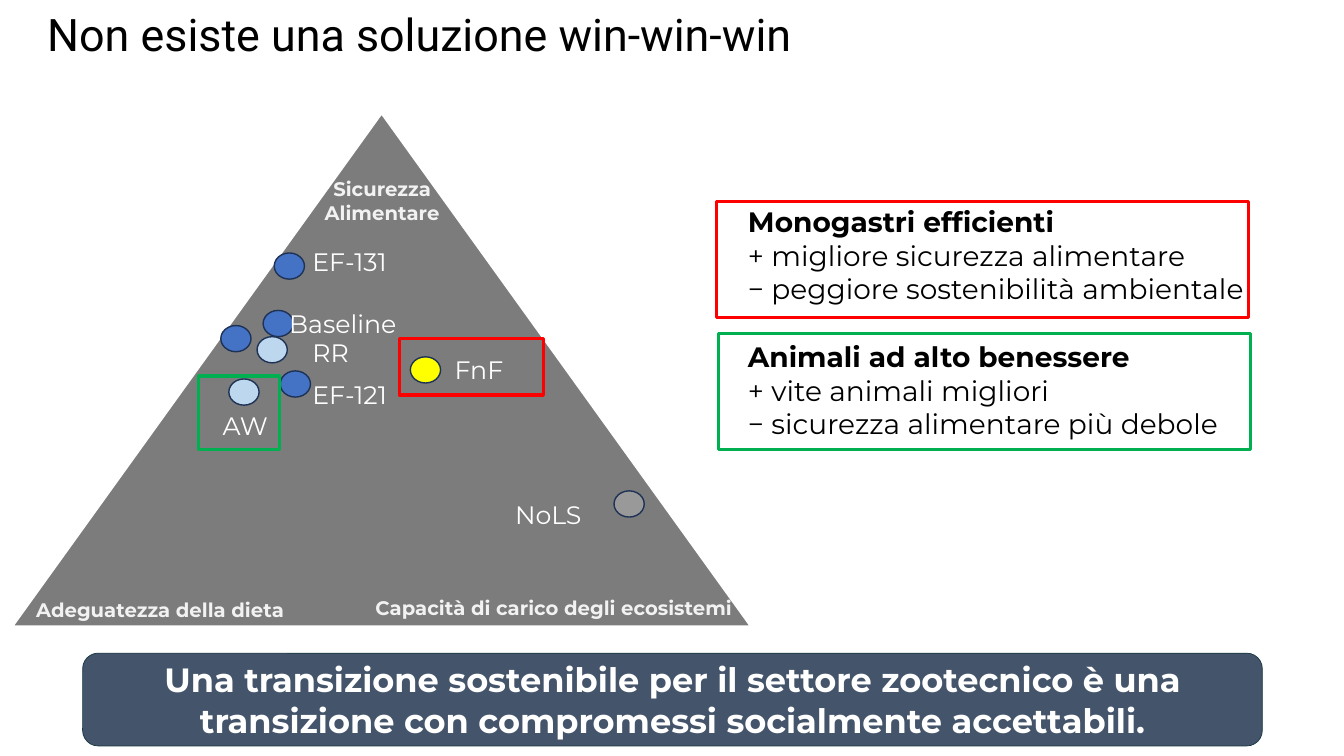
"""Build the slide on trade-offs between food security, diet and ecosystems."""
from pptx import Presentation
from pptx import util as u
from pptx.dml.color import RGBColor
from pptx.enum import shapes, text

PX = 9144
SLIDE = (1333, 750)
COLOURS = {
    "black": "000000", "white": "FFFFFF", "pale": "F2F2F2", "triangle": "7C7C7C",
    "blue": "4472C4", "light": "BDD7EE", "yellow": "FFFF00", "grey": "999999",
    "outline": "1E3256", "banner": "44546A", "banner_line": "16373D",
    "red": "FF0000", "green": "00B050",
}
FORMATS = {
    "title": ({"name": "Roboto", "size": u.Pt(32)}, "black"),
    "heading": ({"name": "Montserrat", "size": u.Pt(20), "bold": True}, "black"),
    "point": ({"name": "Montserrat", "size": u.Pt(20), "bold": False}, "black"),
    "corner": ({"name": "Montserrat", "size": u.Pt(14), "bold": True}, "pale"),
    "label": ({"name": "Montserrat", "size": u.Pt(18)}, "white"),
    "banner": ({"name": "Montserrat", "size": u.Pt(24), "bold": True}, "white"),
}
LEFT, CENTRE, RIGHT = text.PP_ALIGN.LEFT, text.PP_ALIGN.CENTER, text.PP_ALIGN.RIGHT

TITLE = ("Non esiste una soluzione win-win-win", (37, 8, 1079, 145))
OPTIONS_BOX = (732, 130, 601, 313)
OPTIONS_TOP = 73
OPTIONS_GAP = u.Pt(24.4)
OPTIONS = [
    ("Monogastri efficienti",
     ["+ migliore sicurezza alimentare", "− peggiore sostenibilità ambientale"]),
    ("Animali ad alto benessere",
     ["+ vite animali migliori", "− sicurezza alimentare più debole"]),
]
TRIANGLE = (13, 113, 731, 508)
CORNERS = [
    (["Sicurezza", "Alimentare"], (272, 171, 214, 57), CENTRE),
    (["Adeguatezza della dieta"], (26, 588, 386, 34), LEFT),
    (["Capacità di carico degli ecosistemi"], (350, 586, 386, 34), RIGHT),
]
DOT = (30, 26)
DOTS = [
    (407, 354, "yellow"), (261, 308, "blue"), (278, 368, "blue"), (227, 376, "light"),
    (609, 487, "grey"), (219, 323, "blue"), (255, 334, "light"), (272, 251, "blue"),
]
LABEL_HEIGHT = 37
LABELS = [
    ("FnF", 441, 347, 201), ("RR", 300, 330, 65), ("NoLS", 501, 490, 101),
    ("AW", 211, 402, 201), ("Baseline", 277, 301, 201),
    ("EF-121", 300, 371, 201), ("EF-131", 300, 239, 201),
]
BANNER = ("Una transizione sostenibile per il settore zootecnico è una "
          "transizione con compromessi socialmente accettabili.", (82, 648, 1170, 92))
BANNER_INSET = 12
FRAMES = [
    ((396, 336, 143, 56), "red"), ((711, 200, 527, 115), "red"),
    ((197, 373, 80, 73), "green"), ((713, 331, 527, 115), "green"),
]


def px(*lengths):
    return [u.Emu(length * PX) for length in lengths]


def colour(name):
    return RGBColor.from_string(COLOURS[name])


def write(frame, lines, align=LEFT):
    """Fill a text frame with (words, format name) lines."""
    frame.word_wrap = True
    for index, (words, style) in enumerate(lines):
        paragraph = frame.add_paragraph() if index else frame.paragraphs[0]
        paragraph.alignment = align
        run = paragraph.add_run()
        run.text = words
        values, font_colour = FORMATS[style]
        for name, value in values.items():
            setattr(run.font, name, value)
        run.font.color.rgb = colour(font_colour)


def add_text(slide, box, lines, align=LEFT):
    frame = slide.shapes.add_textbox(*px(*box)).text_frame
    write(frame, lines, align)
    return frame


def add_shape(slide, kind, box, fill, line, width):
    shape = slide.shapes.add_shape(kind, *px(*box))
    shape.shadow.inherit = False
    if fill:
        shape.fill.solid()
        shape.fill.fore_color.rgb = colour(fill)
    else:
        shape.fill.background()
    shape.line.color.rgb = colour(line)
    shape.line.width = u.Pt(width)
    return shape


def add_options(slide):
    lines = []
    for heading, points in OPTIONS:
        lines += [(heading, "heading")] + [(point, "point") for point in points]
    frame = add_text(slide, OPTIONS_BOX, lines)
    frame.margin_top = px(OPTIONS_TOP)[0]
    for paragraph, (_, style) in list(zip(frame.paragraphs, lines))[1:]:
        if style == "heading":
            paragraph.space_before = OPTIONS_GAP


def add_diagram(slide):
    kind = shapes.MSO_SHAPE
    add_shape(slide, kind.ISOSCELES_TRIANGLE, TRIANGLE, "triangle", "white", 1)
    for words, box, align in CORNERS:
        add_text(slide, box, [(line, "corner") for line in words], align)
    for left, top, fill in DOTS:
        add_shape(slide, kind.OVAL, (left, top, *DOT), fill, "outline", 1)
    for words, left, top, width in LABELS:
        add_text(slide, (left, top, width, LABEL_HEIGHT), [(words, "label")])


def add_banner(slide):
    words, box = BANNER
    banner = add_shape(slide, shapes.MSO_SHAPE.ROUNDED_RECTANGLE, box,
                       "banner", "banner_line", 0.5)
    frame = banner.text_frame
    frame.vertical_anchor = text.MSO_ANCHOR.MIDDLE
    for side in ("left", "top", "right", "bottom"):
        setattr(frame, f"margin_{side}", px(BANNER_INSET)[0])
    write(frame, [(words, "banner")], CENTRE)


def main():
    presentation = Presentation()
    presentation.slide_width, presentation.slide_height = px(*SLIDE)
    slide = presentation.slides.add_slide(presentation.slide_layouts[6])
    words, box = TITLE
    add_text(slide, box, [(words, "title")]).paragraphs[0].line_spacing = 0.9
    add_options(slide)
    add_diagram(slide)
    add_banner(slide)
    for box, line in FRAMES:
        add_shape(slide, shapes.MSO_SHAPE.RECTANGLE, box, None, line, 2.25)
    presentation.save("out.pptx")


if __name__ == "__main__":
    main()
